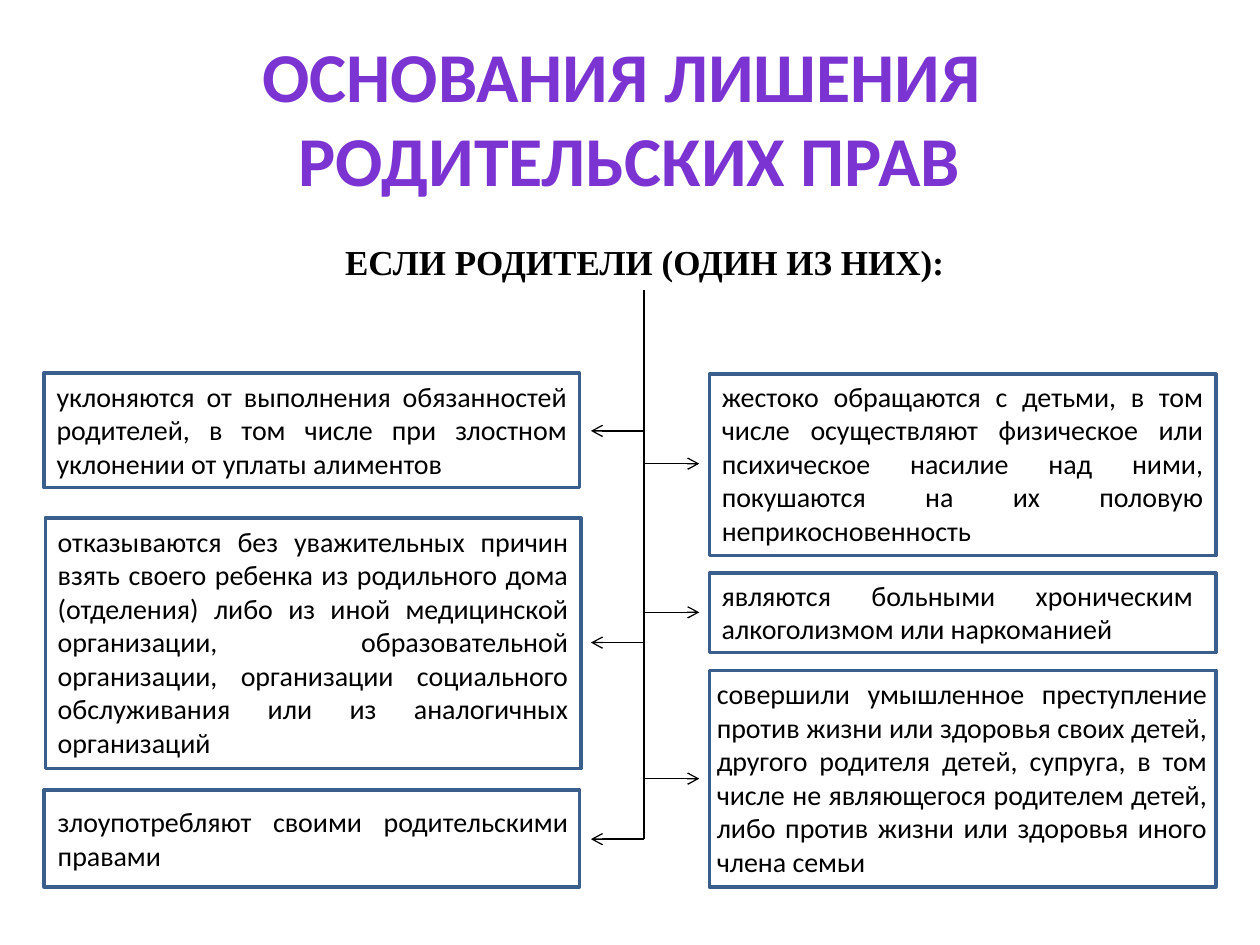
import pptx
import pptx.util
import pptx.dml.color
import pptx.enum.shapes
import pptx.enum.text
import pptx.oxml.ns
import lxml.etree

Inches = pptx.util.Inches
Pt = pptx.util.Pt
RGB = pptx.dml.color.RGBColor.from_string
align = pptx.enum.text.PP_ALIGN
kinds = pptx.enum.shapes

theme = {
    "paper": RGB("FFFFFF"),
    "frame": RGB("3A5F8C"),
    "ink": RGB("000000"),
    "title": {"name": "Calibri", "size": Pt(40), "bold": True},
    "lead": {"name": "Times New Roman", "size": Pt(20), "bold": True},
    "body": {"name": "Calibri", "size": Pt(16), "bold": False},
    "violet": RGB("7B34D2"),
}

deck = pptx.Presentation()
deck.slide_width = Inches(10)
deck.slide_height = Inches(7.5)
slide = deck.slides.add_slide(deck.slide_layouts[6])


def write(place, lines, style, color, side, wrap=True):
    box = slide.shapes.add_textbox(*map(Inches, place))
    frame = box.text_frame
    form = {"word_wrap": wrap, "auto_size": pptx.enum.text.MSO_AUTO_SIZE.SHAPE_TO_FIT_TEXT}
    for key, value in form.items():
        setattr(frame, key, value)
    for index, line in enumerate(lines):
        para = frame.add_paragraph() if index else frame.paragraphs[0]
        para.alignment = side
        run = para.add_run()
        run.text = line
        for key, value in theme[style].items():
            setattr(run.font, key, value)
        run.font.color.rgb = color


def draw(start, end, width, arrow):
    line = slide.shapes.add_connector(
        kinds.MSO_CONNECTOR.STRAIGHT, *map(Inches, start + end))
    line.line.color.rgb = theme["ink"]
    line.line.width = Pt(width)
    if arrow:
        tail = lxml.etree.SubElement(
            line.line._get_or_add_ln(), pptx.oxml.ns.qn("a:tailEnd"))
        tail.set("type", "arrow")
    lxml.etree.SubElement(line._element.spPr, pptx.oxml.ns.qn("a:effectLst"))


write((1.95, 0.21, 6.09, 1.45), ["ОСНОВАНИЯ ЛИШЕНИЯ ", "РОДИТЕЛЬСКИХ ПРАВ"],
      "title", theme["violet"], align.CENTER, wrap=False)
write((2.64, 1.86, 5.24, 0.44), ["ЕСЛИ РОДИТЕЛИ (ОДИН ИЗ НИХ):"],
      "lead", theme["ink"], align.LEFT)

cards = [
    ((0.35, 2.96, 4.25, 0.91), (0.35, 2.96, 4.25, 0.91),
     "уклоняются от выполнения обязанностей родителей, в том числе при "
     "злостном уклонении от уплаты алиментов"),
    ((0.36, 4.11, 4.25, 1.99), (0.36, 4.11, 4.25, 1.99),
     "отказываются без уважительных причин взять своего ребенка из родильного "
     "дома (отделения) либо из иной медицинской организации, образовательной "
     "организации, организации социального обслуживания или из аналогичных "
     "организаций"),
    ((0.35, 6.27, 4.25, 0.77), (0.36, 6.34, 4.25, 0.64),
     "злоупотребляют своими родительскими правами"),
    ((5.63, 2.97, 4.02, 1.44), (5.63, 2.96, 4.02, 1.45),
     "жестоко обращаются с детьми, в том числе осуществляют физическое или "
     "психическое насилие над ними, покушаются на их половую "
     "неприкосновенность"),
    ((5.63, 4.55, 4.02, 0.63), (5.63, 4.54, 3.94, 0.64),
     "являются больными хроническим алкоголизмом или наркоманией"),
    ((5.63, 5.32, 4.02, 1.72), (5.59, 5.32, 4.09, 1.72),
     "совершили умышленное преступление против жизни или здоровья своих детей, "
     "другого родителя детей, супруга, в том числе не являющегося родителем "
     "детей, либо против жизни или здоровья иного члена семьи"),
]
for edge, place, words in cards:
    card = slide.shapes.add_shape(kinds.MSO_SHAPE.RECTANGLE, *map(Inches, edge))
    card.shadow.inherit = False
    card.fill.solid()
    card.fill.fore_color.rgb = theme["paper"]
    card.line.color.rgb = theme["frame"]
    card.line.width = Pt(2)
    write(place, [words], "body", theme["ink"], align.JUSTIFY)

trunk = 5.11
draw((trunk, 2.3), (trunk, 6.66), 1.2, False)
for tip, levels in ((4.69, (3.42, 5.1, 6.66)), (5.55, (3.68, 4.86, 6.18))):
    for level in levels:
        draw((trunk, level), (tip, level), 0.75, True)

deck.save("out.pptx")
